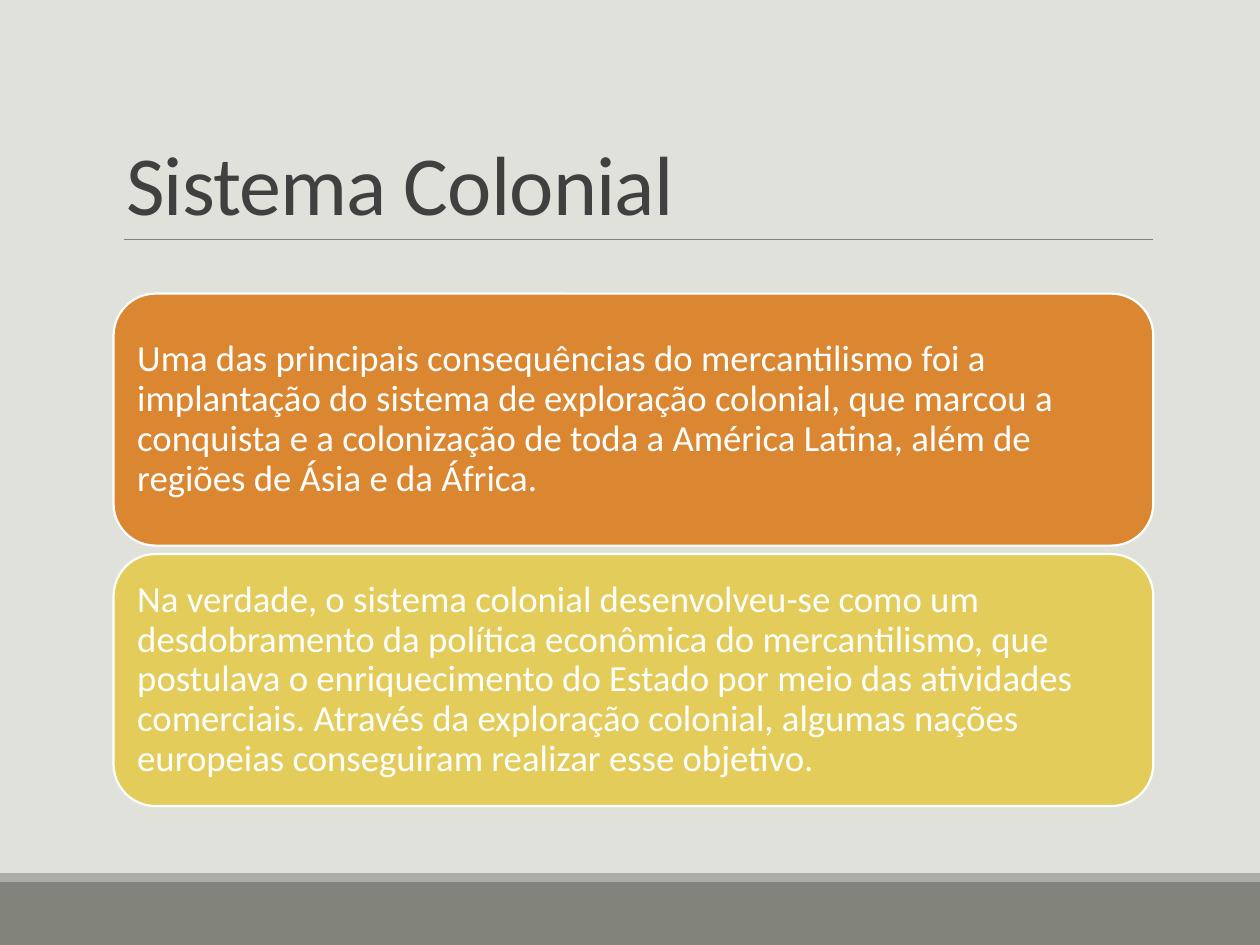
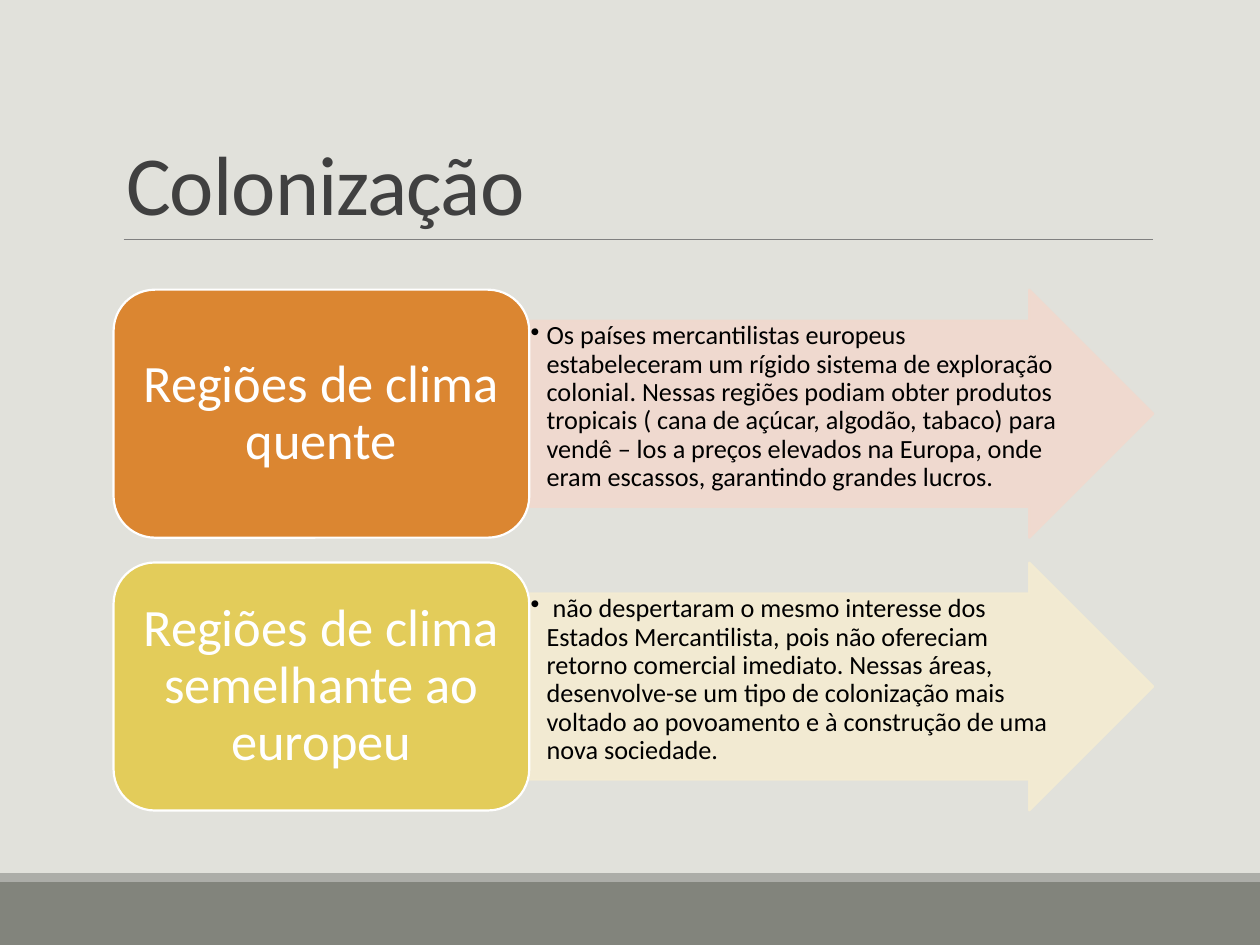
import pptx
import pptx.dml.color
import pptx.enum.shapes
import pptx.enum.text
import pptx.oxml.ns
import pptx.util
import lxml.etree

Cm = pptx.util.Cm
Pt = pptx.util.Pt
RGBColor = pptx.dml.color.RGBColor
Shape = pptx.enum.shapes.MSO_SHAPE
Align = pptx.enum.text.PP_ALIGN
Anchor = pptx.enum.text.MSO_ANCHOR
qn = pptx.oxml.ns.qn

BACKGROUND = RGBColor(0xE1, 0xE1, 0xDB)
BAND = RGBColor(0x82, 0x84, 0x7C)
STRIP = RGBColor(0xAC, 0xAD, 0xA8)
RULE = RGBColor(0x80, 0x80, 0x80)
TITLE = RGBColor(0x40, 0x40, 0x40)
ORANGE = RGBColor(0xDB, 0x86, 0x31)
YELLOW = RGBColor(0xE3, 0xCC, 0x5A)
PALE_ORANGE = RGBColor(0xF1, 0xD9, 0xCE)
PALE_YELLOW = RGBColor(0xF4, 0xEC, 0xD2)
WHITE = RGBColor(0xFF, 0xFF, 0xFF)
BLACK = RGBColor(0x00, 0x00, 0x00)

FONT = "Calibri"
WIDTH, HEIGHT = 25.4, 19.05
LEFT, CONTENT_WIDTH = 2.29, 20.96
RIGHT = LEFT + CONTENT_WIDTH
LABEL_WIDTH = 8.38

SYSTEM = [
    (ORANGE, "Uma das principais consequências do mercantilismo foi a implantação do sistema de "
             "exploração colonial, que marcou a conquista e a colonização de toda a América Latina, "
             "além de regiões de Ásia e da África."),
    (YELLOW, "Na verdade, o sistema colonial desenvolveu-se como um desdobramento da política "
             "econômica do mercantilismo, que postulava o enriquecimento do Estado por meio das "
             "atividades comerciais. Através da exploração colonial, algumas nações europeias "
             "conseguiram realizar esse objetivo."),
]
REGIONS = [
    (ORANGE, PALE_ORANGE, "Regiões de clima quente",
     "Os países mercantilistas europeus estabeleceram um rígido sistema de exploração colonial. "
     "Nessas regiões podiam obter produtos tropicais ( cana de açúcar, algodão, tabaco) para "
     "vendê – los a preços elevados na Europa, onde eram escassos, garantindo grandes lucros."),
    (YELLOW, PALE_YELLOW, "Regiões de clima semelhante ao europeu",
     " não despertaram o mesmo interesse dos Estados Mercantilista, pois não ofereciam retorno "
     "comercial imediato. Nessas áreas, desenvolve-se um tipo de colonização mais voltado ao "
     "povoamento e à construção de uma nova sociedade."),
]


def assign(target, values):
    for name, value in values.items():
        setattr(target, name, value)


class SlideBuilder:
    def __init__(self):
        self.deck = pptx.Presentation()
        assign(self.deck, {"slide_width": Cm(WIDTH), "slide_height": Cm(HEIGHT)})
        fill = self.deck.slide_master.background.fill
        fill.solid()
        fill.fore_color.rgb = BACKGROUND
        self.page = None

    def start(self, title):
        self.page = self.deck.slides.add_slide(self.deck.slide_layouts[5])
        self.shape(Shape.RECTANGLE, 0, 17.78, WIDTH, 1.27, BAND)
        self.shape(Shape.RECTANGLE, 0, 17.6, WIDTH, 0.18, STRIP)
        self.rule(2.49, RIGHT, 4.83)
        box = self.page.shapes.title
        assign(box, {"left": Cm(LEFT), "top": Cm(0.79),
                     "width": Cm(CONTENT_WIDTH), "height": Cm(4.04)})
        span = self.add_text(box, title, 48, TITLE, anchor=Anchor.BOTTOM,
                             margins=(0.25, 0.13), spacing=0.85)
        span.font._element.set("spc", "-50")

    def rule(self, start, end, top):
        line = self.page.shapes.add_connector(
            pptx.enum.shapes.MSO_CONNECTOR.STRAIGHT, Cm(start), Cm(top), Cm(end), Cm(top))
        line.line.color.rgb = RULE
        line.line.width = Pt(0.5)
        lxml.etree.SubElement(line._element.spPr, qn("a:effectLst"))

    def shape(self, kind, left, top, width, height, color, outline=None):
        box = self.page.shapes.add_shape(kind, Cm(left), Cm(top), Cm(width), Cm(height))
        box.shadow.inherit = False
        box.fill.solid()
        box.fill.fore_color.rgb = color
        if outline is None:
            box.line.fill.background()
        else:
            box.line.color.rgb = outline
            box.line.width = Pt(1.25)
        return box

    def add_text(self, box, text, size, color, align=Align.LEFT, anchor=Anchor.MIDDLE,
                 margins=(0.23, 0.23), spacing=0.9):
        side, edge = Cm(margins[0]), Cm(margins[1])
        assign(box.text_frame, {
            "word_wrap": True, "auto_size": pptx.enum.text.MSO_AUTO_SIZE.NONE,
            "vertical_anchor": anchor, "margin_left": side, "margin_right": side,
            "margin_top": edge, "margin_bottom": edge})
        para = box.text_frame.paragraphs[0]
        assign(para, {"alignment": align, "line_spacing": spacing})
        span = para.add_run()
        span.text = text
        assign(span.font, {"name": FONT, "size": Pt(size)})
        span.font.color.rgb = color
        return span

    def card(self, top, width, height, color, text, size, **style):
        box = self.shape(Shape.ROUNDED_RECTANGLE, LEFT, top, width, height, color, WHITE)
        self.add_text(box, text, size, WHITE, **style)

    def arrow(self, left, top, height, color, text):
        box = self.shape(Shape.RIGHT_ARROW, left, top, RIGHT - left, height, color, color)
        box.adjustments[0] = 0.75
        for tint in box._element.spPr.iter(qn("a:srgbClr")):
            lxml.etree.SubElement(tint, qn("a:alpha"), val="90000")
        self.add_text(box, text, 15, BLACK, anchor=Anchor.TOP, margins=(0.03, 0.03))
        self.bullet(box.text_frame.paragraphs[0], 0.32)

    def bullet(self, para, indent):
        properties = para._p.get_or_add_pPr()
        properties.set("marL", str(Cm(indent)))
        properties.set("indent", str(-Cm(indent)))
        lxml.etree.SubElement(properties, qn("a:buChar"), char="•")


def main():
    builder = SlideBuilder()

    builder.start("Sistema Colonial")
    for row, (color, text) in enumerate(SYSTEM):
        builder.card(5.92 + row * 5.25, CONTENT_WIDTH, 5.08, color, text, 21)

    builder.start("Colonização")
    for row, (color, pale, region, text) in enumerate(REGIONS):
        top = 5.84 + row * 5.5
        builder.arrow(LEFT + LABEL_WIDTH, top, 5, pale, text)
        builder.card(top, LABEL_WIDTH, 5, color, region, 30,
                     align=Align.CENTER, margins=(0.3, 0.15))

    builder.deck.save("out.pptx")


if __name__ == "__main__":
    main()
